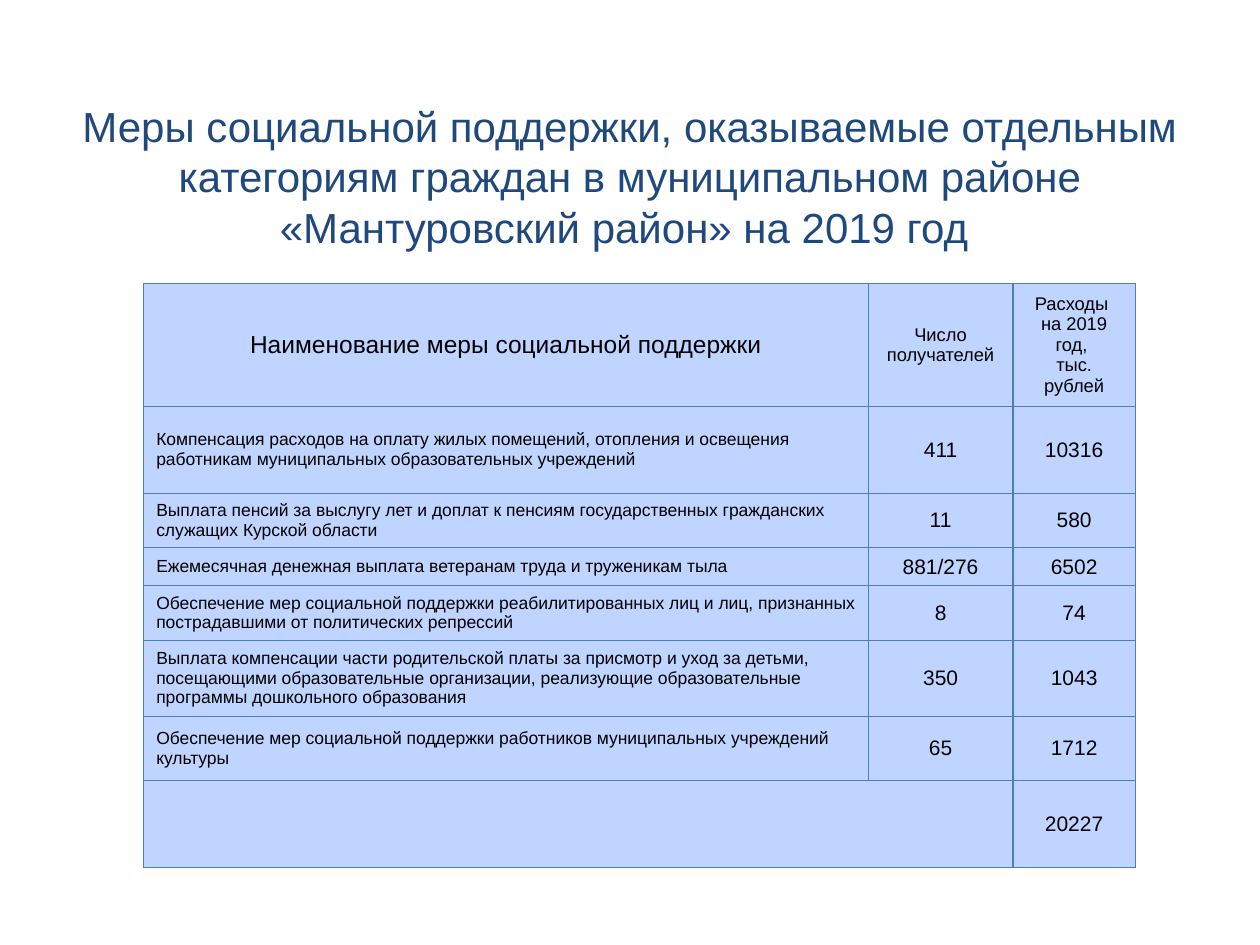
from lxml import etree
from pptx import Presentation
from pptx.dml.color import RGBColor
from pptx.enum.text import MSO_ANCHOR, PP_ALIGN
from pptx.oxml.ns import qn
from pptx.util import Inches, Pt

LEFT, CENTER = PP_ALIGN.LEFT, PP_ALIGN.CENTER
MIDDLE = MSO_ANCHOR.MIDDLE
NAVY, BLACK, PALE, BLUE = "1F497D", "000000", "BFD4FF", "4B7EBC"


def write(frame, text, size=12, color=BLACK, align=CENTER):
    """Fill a text frame, one paragraph per line of text."""
    frame.word_wrap = True
    for i, line in enumerate(text.split("\n")):
        para = frame.paragraphs[0] if i == 0 else frame.add_paragraph()
        para.alignment = align
        run = para.add_run()
        run.text = line
        run.font.name = "Arial"
        run.font.size = Pt(size)
        run.font.color.rgb = RGBColor.from_string(color)


def border(cell):
    """Draw a thin line on each side of a cell, ahead of its fill."""
    props = cell._tc.get_or_add_tcPr()
    for i, side in enumerate(("lnL", "lnR", "lnT", "lnB")):
        line = etree.Element(qn("a:" + side), w=str(Pt(0.75)))
        fill = etree.SubElement(line, qn("a:solidFill"))
        etree.SubElement(fill, qn("a:srgbClr"), val=BLUE)
        props.insert(i, line)


deck = Presentation()
deck.slide_width, deck.slide_height = Inches(10), Inches(7.5)
slide = deck.slides.add_slide(deck.slide_layouts[6])

# Title
title = slide.shapes.add_textbox(Inches(0.5), Inches(0.77), Inches(9), Inches(1.25))
title.text_frame.vertical_anchor = MIDDLE
write(title.text_frame,
      "Меры социальной поддержки, оказываемые отдельным категориям граждан "
      "в муниципальном районе «Мантуровский район» на 2019 год ",
      size=24, color=NAVY)

# Table content
heads = [
    ("Наименование меры социальной поддержки", 14),
    ("Число\nполучателей", 10.5),
    ("Расходы \nна 2019 год, \nтыс. рублей", 10.5),
]
rows = [
    ("Компенсация расходов на оплату жилых помещений, отопления и освещения "
     "работникам муниципальных образовательных учреждений", "411", "10316"),
    ("Выплата пенсий за выслугу лет и доплат к пенсиям государственных "
     "гражданских служащих Курской области", "11", "580"),
    ("Ежемесячная денежная выплата ветеранам труда и труженикам тыла",
     "881/276", "6502"),
    ("Обеспечение мер социальной поддержки реабилитированных лиц и лиц, "
     "признанных пострадавшими от политических репрессий", "8", "74"),
    ("Выплата компенсации части родительской платы за присмотр и уход за детьми, "
     "посещающими образовательные организации, реализующие образовательные\n"
     "программы дошкольного образования", "350", "1043"),
    ("Обеспечение мер социальной поддержки работников муниципальных учреждений "
     "культуры", "65", "1712"),
    ("", "", "20227"),
]
widths = [5.75, 1.15, 0.97]
heights = [0.96, 0.69, 0.43, 0.29, 0.43, 0.59, 0.51, 0.69]

# Table grid
table = slide.shapes.add_table(
    len(heights), len(widths), Inches(1.14), Inches(2.25),
    Inches(sum(widths)), Inches(sum(heights))).table
for col, width in zip(table.columns, widths):
    col.width = Inches(width)
for row, height in zip(table.rows, heights):
    row.height = Inches(height)
for cell in table.iter_cells():
    cell.fill.solid()
    cell.fill.fore_color.rgb = RGBColor.from_string(PALE)
    cell.vertical_anchor = MIDDLE
    border(cell)
last = len(rows)
table.cell(last, 0).merge(table.cell(last, 1))

# Header and body text
for c, (text, size) in enumerate(heads):
    write(table.cell(0, c).text_frame, text, size=size)
for r, row in enumerate(rows, 1):
    for c, text in enumerate(row):
        if text:
            size, align = (10, LEFT) if c == 0 else (12, CENTER)
            write(table.cell(r, c).text_frame, text, size=size, align=align)

deck.save("out.pptx")
